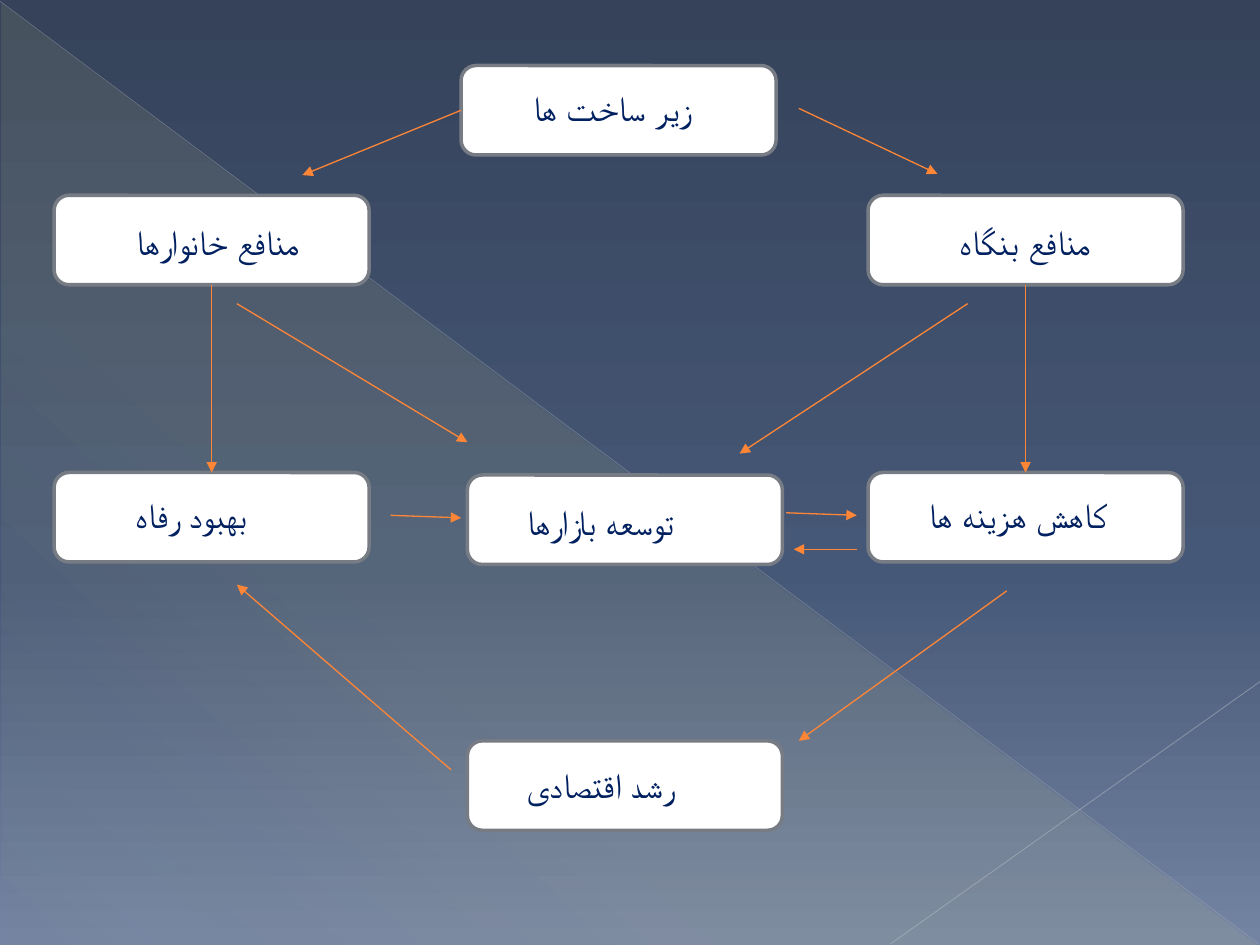
from lxml.etree import SubElement
from pptx import Presentation
from pptx.dml.color import RGBColor
from pptx.enum.shapes import MSO_CONNECTOR, MSO_SHAPE
from pptx.enum.text import MSO_AUTO_SIZE
from pptx.oxml.ns import qn
from pptx.util import Inches, Pt

COLS = 100
WIDTH, HEIGHT = Inches(10), Inches(7.5)
CELL = WIDTH / COLS
BOX = (25, 7.1)
FONT = "TeX Gyre Adventor"
COLORS = {
    "top": "35425A", "middle": "465877", "bottom": "7383A2",
    "glow": "FFF39D", "edge": "BABDC4", "ray": "C1C4CA",
    "box": "FFFFFF", "border": "777C84", "text": "002060", "arrow": "FF8636",
}
LEFT, MID, RIGHT = 4.3, 37.1, 68.9
NODES = {
    "base": ("زیر ساخت ها", (36.6, 5.2), (41.3, 6.4), 22),
    "firm": ("منافع بنگاه", (RIGHT, 15.5), (75.2, 17), 21.3),
    "home": ("منافع خانوارها", (LEFT, 15.5), (9.8, 17), 18.1),
    "welfare": ("بهبود رفاه", (LEFT, 37.5), (9.8, 38.7), 21.3),
    "growth": ("رشد اقتصادی", (MID, 58.8), (40.8, 60.1), 21.3),
    "cost": ("کاهش هزینه ها", (RIGHT, 37.5), (72.7, 38.7), 21.3),
    "market": ("توسعه بازارها", (MID, 37.7), (40.8, 39.2), 21.3),
}
ARROWS = [
    (("base", 1), (24, 13.9)),
    ((63.4, 8.6), (74.4, 13.8)),
    (("firm", 2), ("cost", 0)),
    (("home", 2), ("welfare", 0)),
    ((18.8, 24.1), (37.1, 35.1)),
    ((76.8, 24.1), (58.7, 36)),
    ((31, 40.9), (36.6, 41.1)),
    ((62.4, 40.7), (68, 40.9)),
    ((68, 43.6), (63, 43.6)),
    ((79.9, 46.9), (63.4, 58.8)),
    ((35.8, 61.1), (18.8, 46.4)),
]


def grid(*cells):
    """Turn grid cells into lengths."""
    return [round(cell * CELL) for cell in cells]


def paint(name):
    """Return a named colour."""
    return RGBColor.from_string(COLORS[name])


def fade(node, share):
    """Set the opacity of a colour node in percent."""
    SubElement(node, qn("a:alpha"), val=str(share * 1000))


def blend(fill, root, stops, angle):
    """Fill with a gradient of (place, colour, opacity) stops."""
    fill.gradient()
    fill.gradient_angle = 360 - angle
    bed = root.find(".//" + qn("a:gsLst"))
    for old in list(bed):
        bed.remove(old)
    for place, name, share in stops:
        stop = SubElement(bed, qn("a:gs"), pos=str(place * 1000))
        tint = SubElement(stop, qn("a:srgbClr"), val=COLORS[name])
        if share < 100:
            fade(tint, share)


def add_line(slide, start, end, color, width, share=100, head=False):
    """Draw a straight line with optional opacity and arrowhead."""
    line = slide.shapes.add_connector(MSO_CONNECTOR.STRAIGHT, *grid(*start, *end))
    line.line.width = Pt(width)
    line.line.color.rgb = paint(color)
    props = line.element.spPr
    if share < 100:
        fade(props.find(".//" + qn("a:srgbClr")), share)
    if head:
        SubElement(props.find(qn("a:ln")), qn("a:tailEnd"), type="triangle")
    SubElement(props, qn("a:effectLst"))
    return line


def add_back(slide):
    """Draw the backdrop with its triangle and rays."""
    blend(slide.background.fill, slide.element,
          [(0, "top", 100), (60, "middle", 100), (100, "bottom", 100)], 90)
    wedge = slide.shapes.add_shape(
        MSO_SHAPE.RIGHT_TRIANGLE, *grid(0.1, 0.2, 99.8, 74.8))
    wedge.shadow.inherit = False
    wedge.line.fill.background()
    blend(wedge.fill, wedge.element,
          [(0, "glow", 10), (70, "glow", 8), (100, "glow", 1)], 133)
    add_line(slide, (0, 0.1), (99.9, 74.9), "edge", 0.39, share=35)
    add_line(slide, (100, 54.1), (70.7, 74.9), "ray", 0.47, share=45)


def add_box(slide, spot):
    """Draw a rounded box."""
    box = slide.shapes.add_shape(MSO_SHAPE.ROUNDED_RECTANGLE, *grid(*spot, *BOX))
    box.shadow.inherit = False
    box.fill.solid()
    box.fill.fore_color.rgb = paint("box")
    box.line.color.rgb = paint("border")
    box.line.width = Pt(2)
    return box


def add_text(slide, text, spot, wide, size=20, color="text", font=FONT):
    """Place a line of text."""
    frame = slide.shapes.add_textbox(*grid(*spot, wide, 4.4)).text_frame
    frame.word_wrap = True
    frame.auto_size = MSO_AUTO_SIZE.SHAPE_TO_FIT_TEXT
    run = frame.paragraphs[0].add_run()
    run.text = text
    run.font.size = Pt(size)
    run.font.color.rgb = paint(color)
    run.font.name = font
    SubElement(run.font._element, qn("a:cs"), typeface=font)


def add_arrow(slide, boxes, start, end):
    """Draw an arrow between points or (box, side) pairs."""
    ends = [(0, 0) if tip[0] in boxes else tip for tip in (start, end)]
    line = add_line(slide, *ends, "arrow", 0.75, head=True)
    for tip, join in ((start, line.begin_connect), (end, line.end_connect)):
        if tip[0] in boxes:
            join(boxes[tip[0]], tip[1])


def main():
    """Build the slide and save it."""
    deck = Presentation()
    deck.slide_width, deck.slide_height = WIDTH, HEIGHT
    slide = deck.slides.add_slide(deck.slide_layouts[6])
    add_back(slide)
    boxes = {name: add_box(slide, node[1]) for name, node in NODES.items()}
    for text, _, spot, wide in NODES.values():
        add_text(slide, text, spot, wide)
    for start, end in ARROWS:
        add_arrow(slide, boxes, start, end)
    deck.save("out.pptx")


if __name__ == "__main__":
    main()
